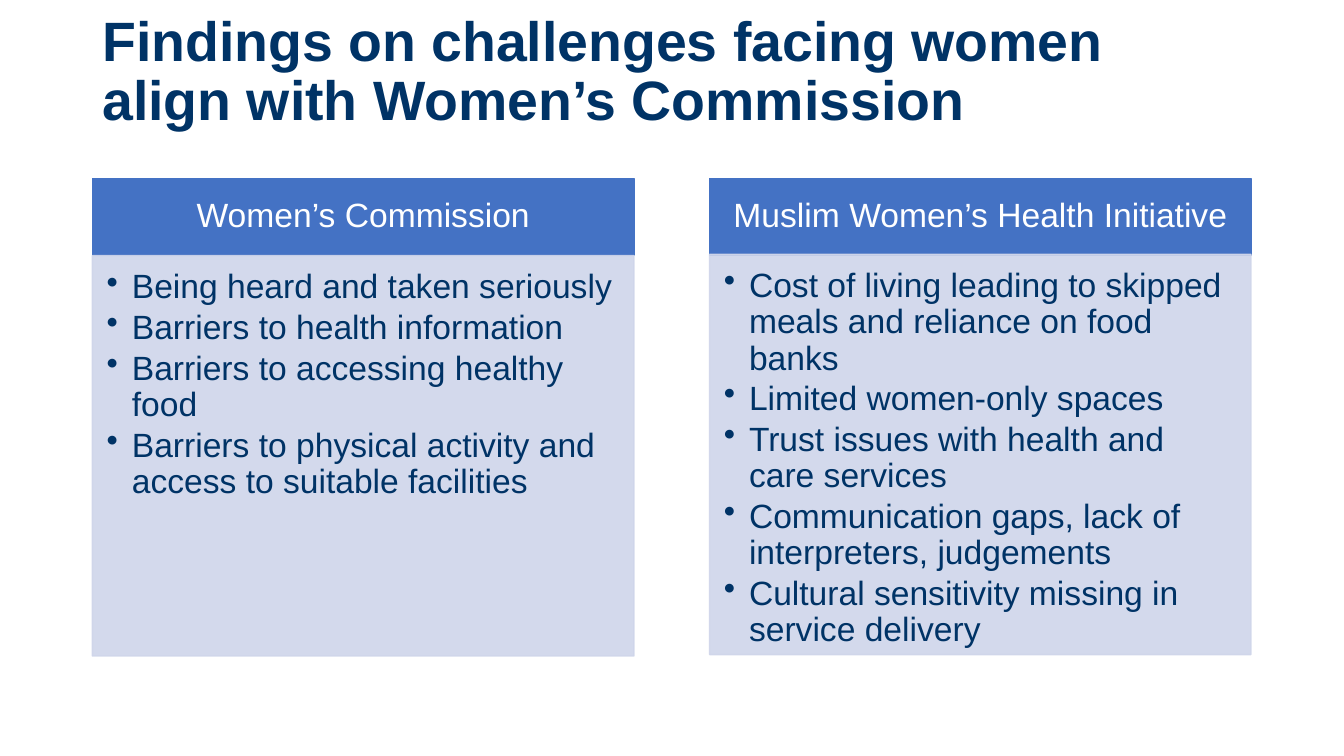
import pptx
import pptx.util
import pptx.dml.color
import pptx.enum.shapes
import pptx.enum.text
import pptx.oxml.ns
from dataclasses import dataclass
from lxml import etree

Pt = pptx.util.Pt
PP_ALIGN = pptx.enum.text.PP_ALIGN
ANCHOR = pptx.enum.text.MSO_ANCHOR


@dataclass(frozen=True)
class Theme:
    font: str = "Arial"
    navy: str = "003366"
    header: str = "4472C4"
    panel: str = "CFD5EA"
    white: str = "FFFFFF"
    title_size: float = 39.6
    text_size: float = 24


def rgb(value):
    return pptx.dml.color.RGBColor.from_string(value)


def set_alpha(color_format, percent):
    """Make a solid fill partly transparent."""
    for color in color_format.iter(pptx.oxml.ns.qn("a:srgbClr")):
        alpha = etree.SubElement(color, pptx.oxml.ns.qn("a:alpha"))
        alpha.set("val", str(percent * 1000))


def write(paragraph, text, *, font, size, color, bold=False,
          align=PP_ALIGN.LEFT, after=0, indent=None):
    """Fill one paragraph; an indent makes it a bullet."""
    paragraph.alignment = align
    paragraph.line_spacing = 0.9
    paragraph.space_before = Pt(0)
    paragraph.space_after = Pt(after)
    if indent:
        paragraph.level = 1
        properties = paragraph._p.get_or_add_pPr()
        properties.set("marL", str(Pt(indent)))
        properties.set("indent", str(-Pt(indent)))
        bullet = etree.SubElement(properties, pptx.oxml.ns.qn("a:buChar"))
        bullet.set("char", "•")
    run = paragraph.add_run()
    run.text = text
    run.font.name = font
    run.font.size = Pt(size)
    run.font.bold = bold
    run.font.color.rgb = rgb(color)


class SlideBuilder:
    def __init__(self, slide, theme):
        self.slide = slide
        self.theme = theme

    def title(self, text, left, top, width, height):
        title = self.slide.shapes.title
        title.left, title.top = Pt(left), Pt(top)
        title.width, title.height = Pt(width), Pt(height)
        frame = title.text_frame
        frame.word_wrap = True
        frame.auto_size = pptx.enum.text.MSO_AUTO_SIZE.NONE
        frame.vertical_anchor = ANCHOR.MIDDLE
        write(frame.paragraphs[0], text, font=self.theme.font,
              size=self.theme.title_size, color=self.theme.navy, bold=True)

    def box(self, left, top, width, height, color, insets, anchor, alpha=100):
        box = self.slide.shapes.add_shape(
            pptx.enum.shapes.MSO_SHAPE.RECTANGLE,
            Pt(left), Pt(top), Pt(width), Pt(height))
        box.shadow.inherit = False
        box.fill.solid()
        box.fill.fore_color.rgb = rgb(color)
        box.line.color.rgb = rgb(color)
        box.line.width = Pt(1)
        if alpha < 100:
            set_alpha(box._element.spPr, alpha)
        frame = box.text_frame
        frame.word_wrap = True
        frame.vertical_anchor = anchor
        (frame.margin_left, frame.margin_top,
         frame.margin_right, frame.margin_bottom) = map(Pt, insets)
        return frame

    def header(self, text, left, top, width, height):
        frame = self.box(left, top, width, height, self.theme.header,
                         (13.4, 7.7, 13.4, 7.7), ANCHOR.MIDDLE)
        write(frame.paragraphs[0], text, font=self.theme.font,
              size=self.theme.text_size, color=self.theme.white,
              align=PP_ALIGN.CENTER)

    def findings(self, items, left, top, width, height):
        frame = self.box(left, top, width, height, self.theme.panel,
                         (10.2, 10.2, 13.7, 15.4), ANCHOR.TOP, alpha=90)
        for number, item in enumerate(items):
            paragraph = frame.add_paragraph() if number else frame.paragraphs[0]
            write(paragraph, item, font=self.theme.font,
                  size=self.theme.text_size, color=self.theme.navy,
                  after=3.2, indent=18)


# Content: heading, top of the findings panel, findings
COLUMNS = [
    ("Women’s Commission", 182.6, [
        "Being heard and taken seriously",
        "Barriers to health information",
        "Barriers to accessing healthy food",
        "Barriers to physical activity and access to suitable facilities",
    ]),
    ("Muslim Women’s Health Initiative", 181.6, [
        "Cost of living leading to skipped meals and reliance on food banks",
        "Limited women-only spaces",
        "Trust issues with health and care services",
        "Communication gaps, lack of interpreters, judgements",
        "Cultural sensitivity missing in service delivery",
    ]),
]
LEFT, COLUMN_STEP, COLUMN_WIDTH = 66, 440.8, 386.8
HEADER_TOP, HEADER_HEIGHT, PANEL_HEIGHT = 127.6, 54.6, 286


def main():
    presentation = pptx.Presentation()
    presentation.slide_width, presentation.slide_height = Pt(960), Pt(540)
    title_only = presentation.slide_layouts[5]
    builder = SlideBuilder(presentation.slides.add_slide(title_only), Theme())

    # Title
    builder.title("Findings on challenges facing women align with Women’s Commission",
                  LEFT, 0, 770, 104.4)

    # Two columns, each a header over its findings
    for index, (heading, panel_top, items) in enumerate(COLUMNS):
        left = LEFT + index * COLUMN_STEP
        builder.header(heading, left, HEADER_TOP, COLUMN_WIDTH, HEADER_HEIGHT)
        builder.findings(items, left, panel_top, COLUMN_WIDTH, PANEL_HEIGHT)

    presentation.save("out.pptx")


if __name__ == "__main__":
    main()
